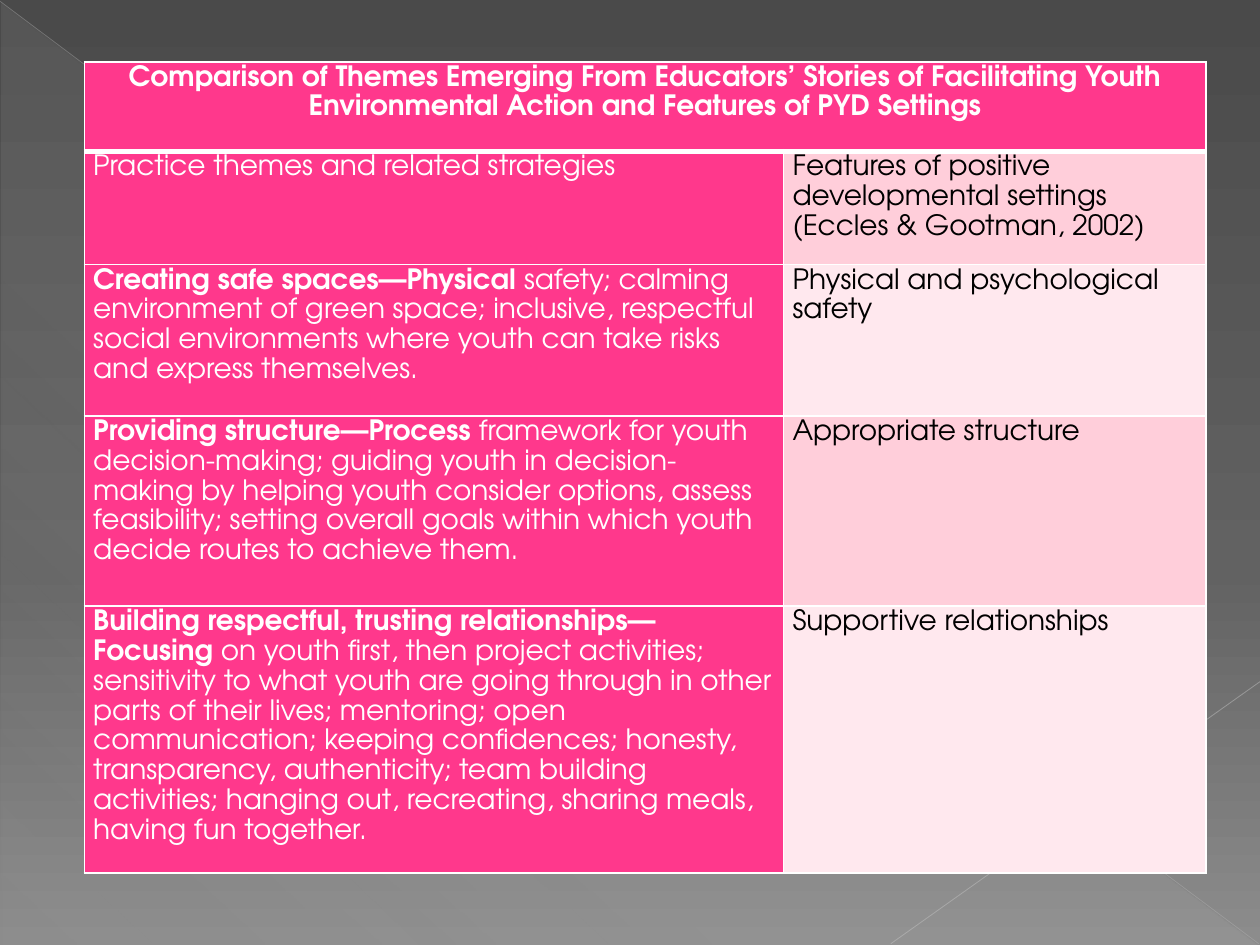
import pptx
import pptx.dml.color
import pptx.enum.shapes
import pptx.enum.text
import pptx.oxml.ns
import pptx.util
from lxml import etree

Inches = pptx.util.Inches
Pt = pptx.util.Pt
qn = pptx.oxml.ns.qn

FONT = "TeX Gyre Adventor"
COLORS = {
    "pink": "FF388C", "rose": "FFCEDA", "blush": "FFE8EE",
    "white": "FFFFFF", "black": "000000",
    "long_line": "BFBFBF", "short_line": "C6C6C6", "haze": "D2D2D2",
    "dark": "4A4A4A", "mid": "626262", "light": "8C8C8C",
}
HEADING = ("Comparison of Themes Emerging From Educators’ Stories of "
           "Facilitating Youth Environmental Action and Features of PYD Settings")
# Bold lead, practice strategies, matching feature of the setting
THEMES = [
    ("", "Practice themes and related strategies",
     "Features of positive developmental settings (Eccles & Gootman, 2002)"),
    ("Creating safe spaces—Physical ",
     "safety; calming environment of green space; inclusive, respectful social "
     "environments where youth can take risks and express themselves.",
     "Physical and psychological safety"),
    ("Providing structure—Process ",
     "framework for youth decision-making; guiding youth in decision-making by "
     "helping youth consider options, assess feasibility; setting overall goals "
     "within which youth decide routes to achieve them.",
     "Appropriate structure"),
    ("Building respectful, trusting relationships—Focusing ",
     "on youth first, then project activities; sensitivity to what youth are going "
     "through in other parts of their lives; mentoring; open communication; keeping "
     "confidences; honesty, transparency, authenticity; team building activities; "
     "hanging out, recreating, sharing meals, having fun together.",
     "Supportive relationships"),
]
COLUMN_WIDTHS = [5.55, 3.35]
ROW_HEIGHTS = [0.71, 0.9, 1.2, 1.51, 2.12]


def rgb(name):
    return pptx.dml.color.RGBColor.from_string(COLORS[name])


def set_alpha(color_element, percent):
    etree.SubElement(color_element, qn("a:alpha"), val=str(percent * 1000))


def set_gradient(properties, stops, angle):
    """Replace the solid fill in properties by (position, colour, opacity) stops."""
    gradient = etree.Element(qn("a:gradFill"))
    stop_list = etree.SubElement(gradient, qn("a:gsLst"))
    for position, color, opacity in stops:
        stop = etree.SubElement(stop_list, qn("a:gs"), pos=str(position * 1000))
        stop_color = etree.SubElement(stop, qn("a:srgbClr"), val=COLORS[color])
        if opacity < 100:
            set_alpha(stop_color, opacity)
    etree.SubElement(gradient, qn("a:lin"), ang=str(angle * 60000), scaled="0")
    properties.replace(properties.find(qn("a:solidFill")), gradient)


def paint_background(slide):
    slide.background.fill.solid()
    set_gradient(slide.element.find(".//" + qn("p:bgPr")),
                 [(0, "dark", 100), (60, "mid", 100), (100, "light", 100)], 90)


def add_haze(slide):
    haze = slide.shapes.add_shape(
        pptx.enum.shapes.MSO_SHAPE.RIGHT_TRIANGLE,
        Inches(0.01), Inches(0.02), Inches(9.98), Inches(7.48))
    haze.shadow.inherit = False
    haze.line.fill.background()
    haze.fill.solid()
    set_gradient(haze.element.spPr,
                 [(0, "haze", 10), (70, "haze", 8), (100, "haze", 1)], 133)


def add_line(slide, start, end, color, width, opacity):
    line = slide.shapes.add_connector(
        pptx.enum.shapes.MSO_CONNECTOR.STRAIGHT,
        *(Inches(value) for value in start + end))
    line.line.width = Pt(width)
    line.line.color.rgb = rgb(color)
    properties = line.element.spPr
    set_alpha(properties.find(".//" + qn("a:srgbClr")), opacity)
    etree.SubElement(properties, qn("a:effectLst"))


def set_borders(cell, top=1, bottom=1):
    properties = cell._tc.get_or_add_tcPr()
    for side, width in (("L", 1), ("R", 1), ("T", top), ("B", bottom)):
        border = etree.SubElement(properties, qn("a:ln" + side), w=str(Pt(width)))
        fill = etree.SubElement(border, qn("a:solidFill"))
        etree.SubElement(fill, qn("a:srgbClr"), val=COLORS["white"])


def fill_cell(cell, fill, color, runs, centered=False):
    """Colour the cell and write its (text, bold) runs."""
    cell.fill.solid()
    cell.fill.fore_color.rgb = rgb(fill)
    cell.margin_left = cell.margin_right = Inches(0.07)
    cell.margin_top = cell.margin_bottom = 0
    paragraph = cell.text_frame.paragraphs[0]
    paragraph.line_spacing = 1.15
    if centered:
        paragraph.alignment = pptx.enum.text.PP_ALIGN.CENTER
    for text, bold in runs:
        if text:
            run = paragraph.add_run()
            run.text = text
            run.font.name = FONT
            run.font.size = Pt(16)
            run.font.bold = bold
            run.font.color.rgb = rgb(color)


def add_comparison(slide):
    table = slide.shapes.add_table(
        len(ROW_HEIGHTS), len(COLUMN_WIDTHS), Inches(0.67), Inches(0.49),
        Inches(sum(COLUMN_WIDTHS)), Inches(sum(ROW_HEIGHTS))).table
    for column, width in zip(table.columns, COLUMN_WIDTHS):
        column.width = Inches(width)
    for index, height in enumerate(ROW_HEIGHTS):
        table.rows[index].height = Inches(height)
        for cell in table.rows[index].cells:
            set_borders(cell, top=3 if index == 1 else 1,
                        bottom=3 if index == 0 else 1)

    heading = table.cell(0, 0)
    heading.merge(table.cell(0, 1))
    fill_cell(heading, "pink", "white", [(HEADING, True)], centered=True)
    for row, (lead, strategies, feature) in enumerate(THEMES, start=1):
        fill_cell(table.cell(row, 0), "pink", "white",
                  [(lead, True), (strategies, False)])
        fill_cell(table.cell(row, 1), "rose" if row % 2 else "blush", "black",
                  [(feature, False)])


def main():
    deck = pptx.Presentation()
    deck.slide_width, deck.slide_height = Inches(10), Inches(7.5)
    slide = deck.slides.add_slide(deck.slide_layouts.get_by_name("Blank"))
    paint_background(slide)
    add_haze(slide)
    add_line(slide, (0, 0.01), (9.99, 7.49), "long_line", 0.39, 35)
    add_line(slide, (10, 5.41), (7.07, 7.49), "short_line", 0.47, 45)
    add_comparison(slide)
    deck.save("out.pptx")


if __name__ == "__main__":
    main()
